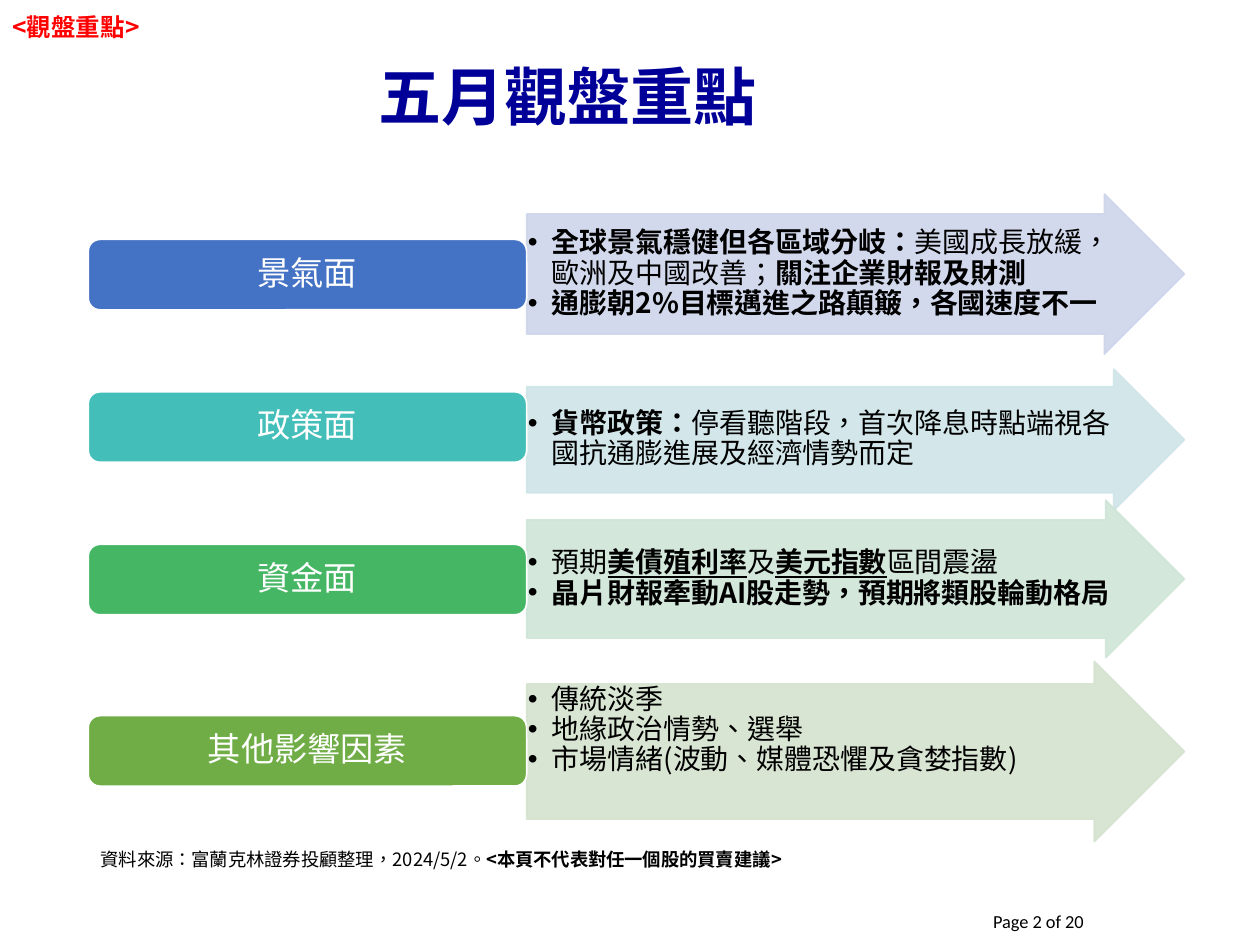
from dataclasses import dataclass

from lxml.etree import SubElement
from pptx import Presentation
from pptx.dml.color import RGBColor
from pptx.enum.shapes import MSO_SHAPE
from pptx.enum.text import MSO_ANCHOR, PP_ALIGN
from pptx.oxml.ns import qn
from pptx.util import Inches, Pt


@dataclass(frozen=True)
class Theme:
    sans: str = "Noto Sans CJK SC"
    latin: str = "Calibri"
    navy: str = "000099"
    red: str = "FF0000"
    black: str = "000000"
    white: str = "FFFFFF"
    title: float = 36
    label: float = 19
    body: float = 16
    tag: float = 14
    note: float = 10.5


THEME = Theme()
WIDE, HIGH = 10, 7.5

# Columns: label, then arrow
LEFT, SPLIT, RIGHT = 0.7, 4.18, 9.4
LABEL_H = 0.56

# Label, label colour, label top, arrow colour, arrow top, arrow height, points
# Run styles: b = bold, u = underline
ROWS = [
    ("景氣面", "4472C4", 1.9, "CFD5EA", 1.54, 1.27, [
        [("全球景氣穩健但各區域分岐：", "b"), ("美國成長放緩，歐洲及中國改善；", ""),
         ("關注企業財報及財測", "b")],
        [("通膨朝2%目標邁進之路顛簸，各國速度不一", "b")]]),
    ("政策面", "43BEB9", 3.11, "CFE5E8", 2.93, 1.12, [
        [("貨幣政策：", "b"),
         ("停看聽階段，首次降息時點端視各國抗通膨進展及經濟情勢而定", "")]]),
    ("資金面", "45B664", 4.32, "CFE5D8", 3.97, 1.25, [
        [("預期", ""), ("美債殖利率", "bu"), ("及", ""), ("美元指數", "bu"),
         ("區間震盪", "")],
        [("晶片財報牽動AI股走勢，預期將類股輪動格局", "b")]]),
    ("其他影響因素", "70AD47", 5.68, "D5E3CF", 5.25, 1.43, [
        [("傳統淡季", "")],
        [("地緣政治情勢、選舉", "")],
        [("市場情緒(波動、媒體恐懼及貪婪指數)", "")]]),
]


def add_run(para, text, size, color, style="", face=THEME.sans):
    run = para.add_run()
    run.text = text
    font = run.font
    font.size, font.name = Pt(size), face
    font.bold, font.underline = "b" in style, "u" in style
    font.color.rgb = RGBColor.from_string(color)
    props = font._element
    props.set("lang", "zh-TW")
    SubElement(props, qn("a:ea"), typeface=face)


def set_frame(frame, anchor, side=0.1, edge=0.05):
    frame.word_wrap = True
    frame.vertical_anchor = anchor
    frame.margin_left = frame.margin_right = Inches(side)
    frame.margin_top = frame.margin_bottom = Inches(edge)


def add_text(slide, box, runs, align=PP_ALIGN.LEFT, anchor=MSO_ANCHOR.MIDDLE, space=1.0):
    frame = slide.shapes.add_textbox(*map(Inches, box)).text_frame
    set_frame(frame, anchor)
    para = frame.paragraphs[0]
    para.alignment, para.line_spacing = align, space
    for run in runs:
        add_run(para, *run)


def add_block(slide, kind, box, fill, line):
    shape = slide.shapes.add_shape(kind, *map(Inches, box))
    shape.shadow.inherit = False
    shape.fill.solid()
    shape.fill.fore_color.rgb = RGBColor.from_string(fill)
    shape.line.color.rgb = RGBColor.from_string(line)
    shape.line.width = Pt(1)
    return shape


def add_label(slide, top, text, color):
    box = (LEFT, top, SPLIT - LEFT, LABEL_H)
    shape = add_block(slide, MSO_SHAPE.ROUNDED_RECTANGLE, box, color, THEME.white)
    set_frame(shape.text_frame, MSO_ANCHOR.MIDDLE, 0.08, 0.04)
    para = shape.text_frame.paragraphs[0]
    para.alignment, para.line_spacing = PP_ALIGN.CENTER, 0.9
    add_run(para, text, THEME.label, THEME.white)


def add_bullet(para):
    props = para._p.get_or_add_pPr()
    props.set("marL", str(Inches(0.19)))
    props.set("indent", str(-Inches(0.19)))
    SubElement(props, qn("a:buFont"), typeface="Arial")
    SubElement(props, qn("a:buChar"), char="•")


def add_arrow(slide, top, height, color, points):
    box = (SPLIT, top, RIGHT - SPLIT, height)
    shape = add_block(slide, MSO_SHAPE.RIGHT_ARROW, box, color, color)
    shape.adjustments[0], shape.adjustments[1] = 0.75, 0.5
    for tint in shape._element.spPr.iter(qn("a:srgbClr")):
        SubElement(tint, qn("a:alpha"), val="90000")
    # Three points fill the arrow from its top edge
    anchor = MSO_ANCHOR.TOP if len(points) > 2 else MSO_ANCHOR.MIDDLE
    frame = shape.text_frame
    set_frame(frame, anchor, 0.01, 0.01)
    for i, runs in enumerate(points):
        para = frame.add_paragraph() if i else frame.paragraphs[0]
        add_bullet(para)
        para.alignment, para.line_spacing = PP_ALIGN.LEFT, 0.9
        for text, style in runs:
            add_run(para, text, THEME.body, THEME.black, style)


def set_title(slide, text):
    title = slide.shapes.title
    title.left, title.top = 0, Inches(0.04 * HIGH)
    title.width, title.height = Inches(0.9 * WIDE), Inches(0.99)
    set_frame(title.text_frame, MSO_ANCHOR.MIDDLE)
    para = title.text_frame.paragraphs[0]
    para.alignment, para.line_spacing = PP_ALIGN.CENTER, 0.9
    add_run(para, text, THEME.title, THEME.navy, "b")


def main():
    deck = Presentation()
    deck.slide_width, deck.slide_height = Inches(WIDE), Inches(HIGH)
    slide = deck.slides.add_slide(deck.slide_layouts[5])

    # Heading and section tag
    set_title(slide, "五月觀盤重點")
    add_text(slide, (0, 0.01, 3.15, 0.44),
             [("<觀盤重點>", THEME.tag, THEME.red, "b")], space=0.9)

    # One arrow and one label for each theme
    for name, color, top, tint, start, height, points in ROWS:
        add_arrow(slide, start, height, tint, points)
        add_label(slide, top, name, color)

    # Source note and page number
    add_text(slide, (LEFT, 6.68, 6.73, 0.28), [
        ("資料來源：富蘭克林證券投顧整理，2024/5/2。", THEME.note, THEME.black),
        ("<本頁不代表對任一個股的買賣建議>", THEME.note, THEME.black, "b"),
    ], anchor=MSO_ANCHOR.TOP)
    add_text(slide, (6.45, 7.11, 2.25, 0.4),
             [("Page 2 of 20", THEME.note, THEME.black, "", THEME.latin)],
             PP_ALIGN.RIGHT)

    deck.save("out.pptx")


if __name__ == "__main__":
    main()
